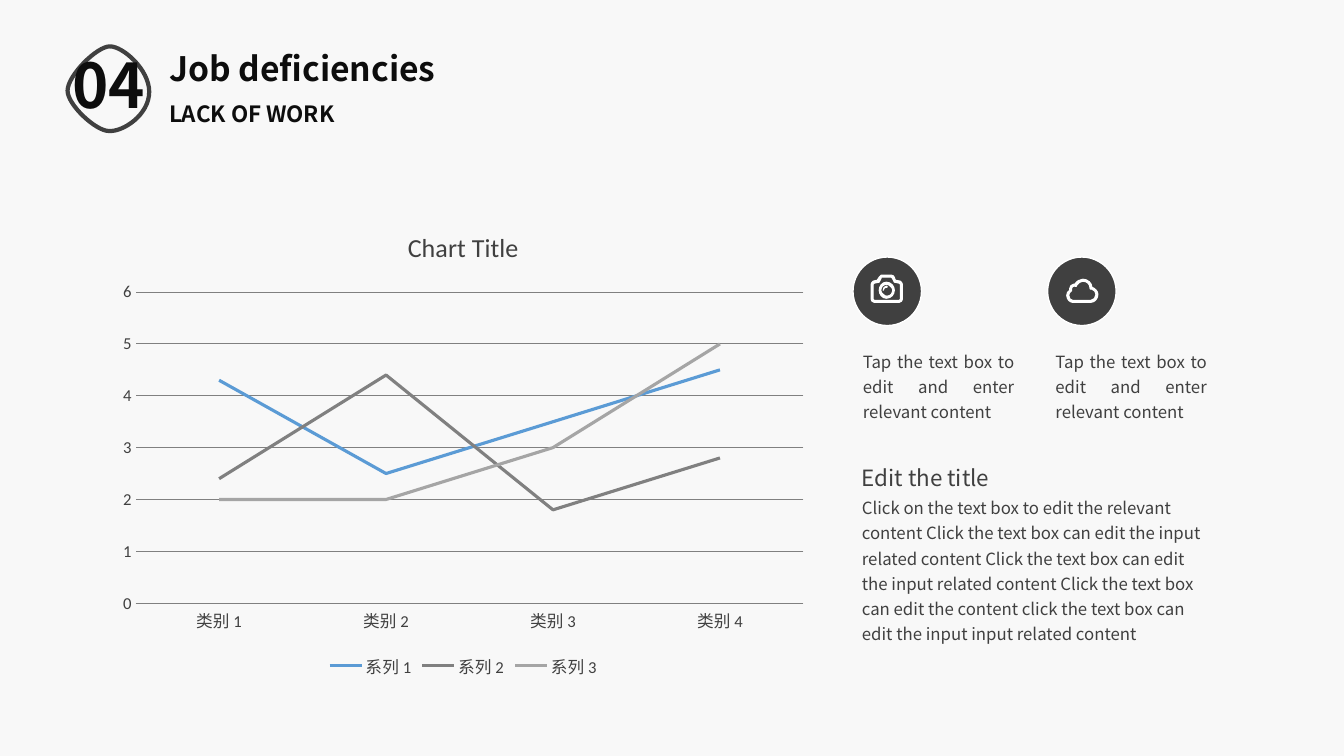
from pptx import Presentation
from pptx import util as u
from pptx.chart.data import CategoryChartData
from pptx.dml.color import RGBColor
from pptx.enum import chart as ch, shapes, text
from pptx.oxml.ns import qn
from pptx.oxml.xmlchemy import OxmlElement

INK, DARK, GREY, WHITE = "0D0D0D", "404040", "808080", "FFFFFF"
HEAD, BODY = "Noto Sans CJK JP", "Noto Sans CJK SC"
LEFT, JUST, MID = text.PP_ALIGN.LEFT, text.PP_ALIGN.JUSTIFY, text.PP_ALIGN.CENTER

# Outlines in hundredths of an inch: a pair is a line, six numbers a curve
RING = [[(0, 44), (0, 29, 29, 0, 42, 0), (55, 0, 81, 23, 81, 45),
         (81, 68, 55, 85, 41, 84), (28, 84, 0, 58, 0, 44)]]
LENS = [[(15, 7), (11, 7, 8, 11, 8, 15), (8, 19, 11, 23, 15, 23),
         (20, 23, 23, 19, 23, 15), (23, 11, 20, 7, 15, 7)],
        [(20, 19), (18, 21, 14, 22, 12, 19), (9, 17, 9, 14, 11, 11),
         (13, 9, 17, 8, 19, 11), (22, 13, 22, 16, 20, 19)]]
GLINT = [[(15, 11), (13, 11, 12, 13, 12, 15), (12, 13, 14, 12, 15, 12),
          (16, 12), (16, 11)]]
CASE = [[(29, 6), (24, 5), (23, 2), (23, 1, 21, 0, 20, 0), (10, 0),
         (9, 0, 8, 1, 8, 2), (6, 5), (2, 6), (1, 7, 0, 8, 0, 9), (0, 24),
         (0, 25, 1, 27, 3, 27), (28, 27), (30, 27, 31, 25, 31, 24), (31, 9),
         (31, 8, 30, 7, 29, 6)],
        [(29, 24), (29, 24, 29, 25, 28, 25), (3, 25), (2, 25, 2, 24, 2, 24),
         (2, 9), (2, 9, 2, 8, 3, 8), (8, 7), (10, 3), (10, 2), (20, 2),
         (21, 2, 21, 3, 21, 3), (23, 7), (28, 8), (29, 8, 29, 9, 29, 9)]]
CLOUD = [[(25, 8), (25, 4, 21, 0, 16, 0), (13, 0, 10, 2, 8, 5), (7, 5),
          (5, 5, 3, 7, 3, 9), (3, 11), (1, 12, 0, 14, 0, 16),
          (0, 20, 3, 23, 6, 23), (24, 23), (28, 23, 31, 19, 31, 15),
          (31, 12, 28, 9, 25, 8)],
         [(24, 21), (6, 21), (4, 21, 2, 19, 2, 16), (2, 15, 3, 13, 4, 12),
          (5, 12, 5, 12, 5, 10), (5, 9), (5, 8, 6, 7, 7, 7), (8, 7),
          (9, 8, 10, 7, 10, 6), (11, 4, 14, 2, 16, 2), (20, 2, 23, 5, 23, 8),
          (23, 10, 23, 10, 25, 10), (27, 10, 29, 13, 29, 15),
          (29, 18, 27, 21, 24, 21)]]


def color(code):
    return RGBColor.from_string(code)


def style(font, size, code, name, bold=False):
    font.size, font.name, font.bold = u.Pt(size), name, bold
    font.color.rgb = color(code)


def stroke(line, code, width):
    line.color.rgb = color(code)
    line.width = u.Pt(width)


def paint(shape, fill=None, code=None, width=0):
    shape.shadow.inherit = False
    if fill:
        shape.fill.solid()
        shape.fill.fore_color.rgb = color(fill)
    else:
        shape.fill.background()
    if code:
        stroke(shape.line, code, width)
    else:
        shape.line.fill.background()


def write(shape, words, size, code, name, bold=False, align=LEFT, space=1.0):
    frame = shape.text_frame
    frame.text = words
    frame.word_wrap = True
    frame.auto_size = text.MSO_AUTO_SIZE.SHAPE_TO_FIT_TEXT
    frame.vertical_anchor = text.MSO_ANCHOR.TOP
    para = frame.paragraphs[0]
    para.alignment, para.line_spacing = align, space
    style(para.font, size, code, name, bold)


def label(slide, box, words, *args, **opts):
    write(slide.shapes.add_textbox(*map(u.Inches, box)), words, *args, **opts)


def bend(shape, loops):
    """Join the three points of each curve into one Bezier segment."""
    nodes = iter(list(shape.element.iter(qn("a:lnTo"))))
    for part in (part for loop in loops for part in loop[1:]):
        node = next(nodes)
        if len(part) == 6:
            curve = OxmlElement("a:cubicBezTo")
            node.addprevious(curve)
            for old in (node, next(nodes), next(nodes)):
                curve.append(old[0])
                old.getparent().remove(old)


def draw(parts, x, y, loops, fill, code, width):
    pen = None
    for loop in loops:
        dots = [(part[i] * 100, part[i + 1] * 100)
                for part in loop for i in range(0, len(part), 2)]
        if pen:
            pen.move_to(*dots[0])
        else:
            pen = parts.build_freeform(*dots[0], scale=u.Inches(1) / 10000)
        pen.add_line_segments(dots[1:], close=True)
    shape = pen.convert_to_shape(u.Inches(x), u.Inches(y))
    bend(shape, loops)
    paint(shape, fill, code, width)


def header(slide, x, y):
    # Number in its ring
    draw(slide.shapes, x + 0.22, y + 0.04, RING, None, DARK, 3)
    label(slide, (x, y, 1.26, 0.84), "04", 44, INK, HEAD, bold=True, align=MID)
    # Title and subtitle
    title = slide.shapes.title
    title.left, title.top = u.Inches(x + 1.13), u.Inches(y - 0.29)
    title.width, title.height = u.Inches(5.42), u.Inches(0.67)
    write(title, "Job deficiencies", 24, INK, HEAD, bold=True, space=1.75)
    strip = slide.shapes.add_shape(
        shapes.MSO_SHAPE.SNIP_1_RECTANGLE,
        *map(u.Inches, (x + 1.13, y + 0.52, 5.49, 0.37)))
    strip.adjustments[0] = 0
    paint(strip)
    write(strip, "LACK OF WORK", 16, INK, HEAD, bold=True)


def graph(slide, box):
    data = CategoryChartData()
    data.categories = [f"类别 {i}" for i in range(1, 5)]
    rows = [(4.3, 2.5, 3.5, 4.5), (2.4, 4.4, 1.8, 2.8), (2, 2, 3, 5)]
    for i, vals in enumerate(rows, 1):
        data.add_series(f"系列 {i}", vals)
    chart = slide.shapes.add_chart(
        ch.XL_CHART_TYPE.LINE, *map(u.Inches, box), data).chart
    style(chart.font, 10, DARK, "Calibri")

    # Title and legend
    chart.has_title = True
    chart.chart_title.include_in_layout = False
    frame = chart.chart_title.text_frame
    frame.text = "Chart Title"
    style(frame.paragraphs[0].font, 18.6, DARK, "Calibri")
    chart.has_legend = True
    chart.legend.position = ch.XL_LEGEND_POSITION.BOTTOM
    chart.legend.include_in_layout = False
    style(chart.legend.font, 11.9, DARK, "Calibri")

    # Axes
    cat, val = chart.category_axis, chart.value_axis
    for axis in (cat, val):
        axis.major_tick_mark = axis.minor_tick_mark = ch.XL_TICK_MARK.NONE
        style(axis.tick_labels.font, 11.9, DARK, "Calibri")
    stroke(cat.format.line, GREY, 0.75)
    val.format.line.fill.background()
    val.minimum_scale, val.maximum_scale, val.major_unit = 0, 6, 1
    stroke(val.major_gridlines.format.line, GREY, 0.75)

    # Lines
    plot = chart.plots[0]
    plot.vary_by_categories = False
    for line, code in zip(plot.series, ("5B9BD5", GREY, "A5A5A5")):
        line.smooth = False
        line.marker.style = ch.XL_MARKER_STYLE.NONE
        stroke(line.format.line, code, 2.25)


def badge(slide, x, y, dx, dy, icon):
    disc = slide.shapes.add_shape(
        shapes.MSO_SHAPE.OVAL, *map(u.Inches, (x, y, 0.68, 0.68)))
    paint(disc, DARK, WHITE, 1)
    parts = slide.shapes
    if len(icon) > 1:
        parts = parts.add_group_shape().shapes
    for loops in icon:
        draw(parts, x + dx, y + dy, loops, WHITE, WHITE, 0.75)


def notes(slide, x, y):
    # Two badges with captions
    badge(slide, x, y, 0.18, 0.18, (LENS, GLINT, CASE))
    badge(slide, x + 1.93, y, 0.19, 0.22, (CLOUD,))
    for left in (x, x + 1.91):
        label(slide, (left, y + 0.84, 1.7, 0.86),
              "Tap the text box to edit and enter relevant content",
              12, DARK, BODY, align=JUST, space=1.25)
    # Closing paragraph
    label(slide, (x - 0.01, y + 2.29, 3.61, 1.36),
          "Click on the text box to edit the relevant content Click the text "
          "box can edit the input related content Click the text box can edit "
          "the input related content Click the text box can edit the content "
          "click the text box can edit the input input related content",
          12, DARK, BODY, space=1.25)
    label(slide, (x - 0.01, y + 2.01, 1.59, 0.37), "Edit the title",
          16, DARK, BODY)


def main():
    deck = Presentation()
    deck.slide_width, deck.slide_height = u.Inches(13.33), u.Inches(7.5)
    slide = deck.slides.add_slide(deck.slide_layouts[5])
    slide.background.fill.solid()
    slide.background.fill.fore_color.rgb = color("F8F8F8")
    header(slide, 0.45, 0.42)
    graph(slide, (1.08, 2.08, 7.03, 4.69))
    notes(slide, 8.46, 2.55)
    deck.save("out.pptx")


if __name__ == "__main__":
    main()
